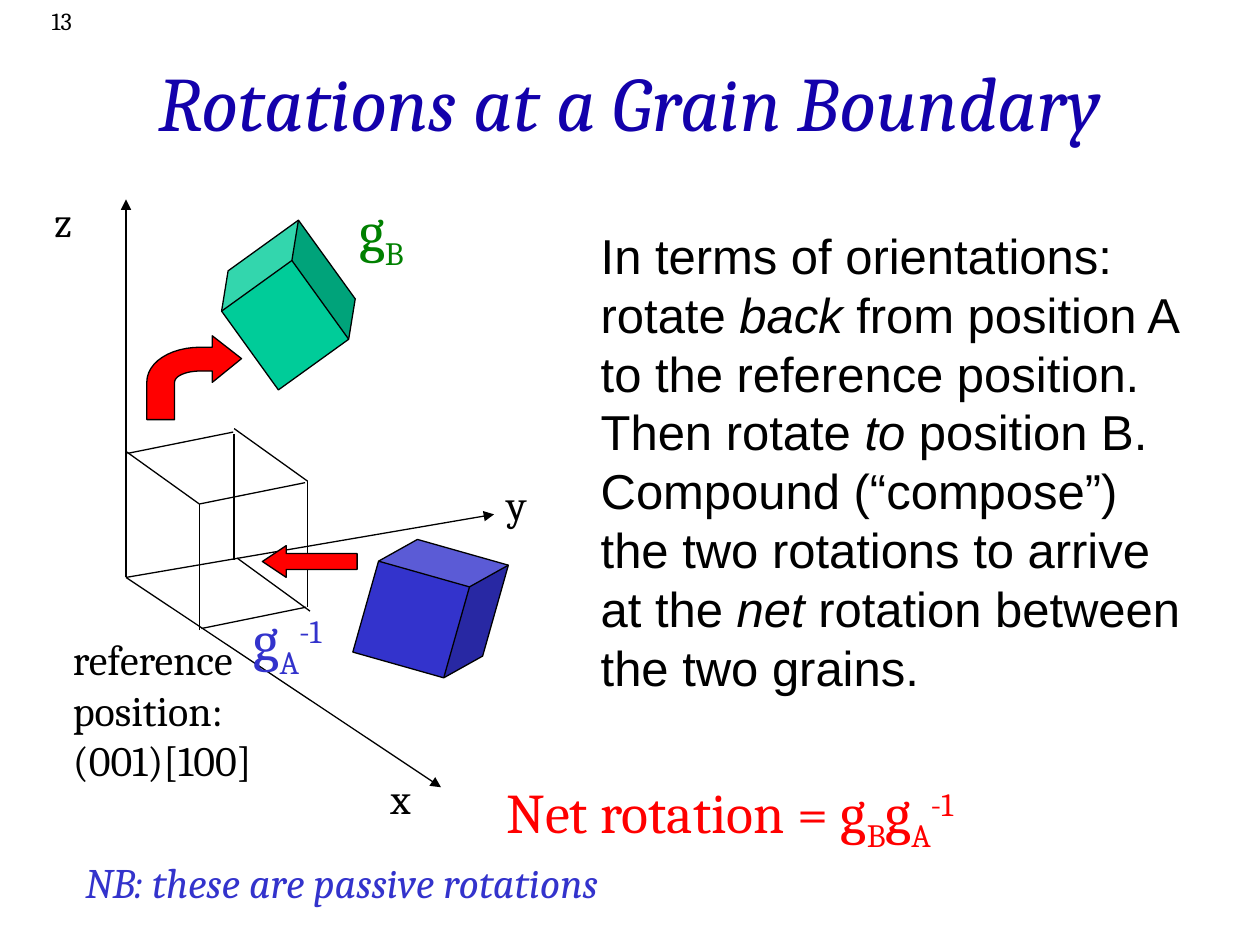
import pptx
import pptx.util
import pptx.dml.color
import pptx.oxml
import pptx.oxml.ns
import pptx.enum.shapes
import pptx.enum.text

Cm, Pt = pptx.util.Cm, pptx.util.Pt
KIND = pptx.enum.shapes.MSO_SHAPE
ALIGN = pptx.enum.text.PP_ALIGN

HUES = {
    "ink": "000000", "title": "1301AB", "red": "FF0000",
    "teal": "00CC99", "blue": "3333CC", "green": "008000",
}
SUB, SUP = "-25000", "30000"


def hue(name):
    return pptx.dml.color.RGBColor.from_string(HUES[name])


def style(par, size, color="ink", face="Cambria", slant=False):
    font = par.font
    font.size, font.name, font.italic = Pt(size), face, slant
    font.color.rgb = hue(color)


def fill_par(par, parts):
    """Parts are strings or (text, mark) pairs; a mark is "i", SUB or SUP."""
    for part in parts:
        text, mark = (part, None) if isinstance(part, str) else part
        for i, line in enumerate(text.split("\n")):
            if i:
                par.add_line_break()
            run = par.add_run()
            run.text = line
            if mark == "i":
                run.font.italic = True
            elif mark:
                run.font._element.set("baseline", mark)


def label(slide, box, pars, size, color="ink", face="Cambria", slant=False):
    frame = slide.shapes.add_textbox(*map(Cm, box)).text_frame
    frame.word_wrap = False
    for i, parts in enumerate(pars):
        par = frame.add_paragraph() if i else frame.paragraphs[0]
        style(par, size, color, face, slant)
        fill_par(par, parts)
    return frame


def paint(shape, color):
    shape.shadow.inherit = False
    shape.fill.solid()
    shape.fill.fore_color.rgb = hue(color)
    shape.line.color.rgb = hue("ink")
    shape.line.width = Pt(0.75)


def solid(slide, kind, box, color, turn=0):
    shape = slide.shapes.add_shape(kind, *map(Cm, box))
    shape.rotation = turn
    paint(shape, color)
    return shape


def edge(slide, start, end, arrow=False):
    line = slide.shapes.add_connector(
        pptx.enum.shapes.MSO_CONNECTOR.STRAIGHT, *map(Cm, start + end))
    line.line.color.rgb = hue("ink")
    line.line.width = Pt(0.75)
    if arrow:
        tail = pptx.oxml.ns.qn("a:tailEnd")
        line.line._get_or_add_ln().makeelement(tail)
        line.line._get_or_add_ln().append(pptx.oxml.parse_xml(
            '<a:tailEnd xmlns:a="http://schemas.openxmlformats.org/'
            'drawingml/2006/main" type="triangle"/>'))
    props = line._element.spPr
    props.append(props.makeelement(pptx.oxml.ns.qn("a:effectLst")))


def curve(a, b, c, d, steps=12):
    """Points along a cubic curve, without its start."""
    for i in range(1, steps + 1):
        t = i / steps
        u = 1 - t
        yield tuple(u**3 * p + 3 * u * u * t * q + 3 * u * t * t * r + t**3 * s
                    for p, q, r, s in zip(a, b, c, d))


def bend(slide, x, y):
    """Curved arrow that leads from the reference cube to grain B."""
    dots = [(1.91, 0.46), (1.32, 0), (1.32, 0.23), (1.09, 0.23)]
    dots += curve((1.09, 0.23), (0.48, 0.23), (0, 0.53), (0, 0.94))
    dots += [(0, 1.69), (0.56, 1.69), (0.56, 0.94)]
    dots += curve((0.56, 0.94), (0.56, 0.81), (0.79, 0.71), (1.09, 0.71))
    dots += [(1.32, 0.71), (1.32, 0.94)]
    dots = [(Cm(x + p), Cm(y + q)) for p, q in dots]
    pen = slide.shapes.build_freeform(*dots[0])
    pen.add_line_segments(dots[1:], close=True)
    paint(pen.convert_to_shape(), "red")


def heading(slide, box):
    title = slide.shapes.title
    title.left, title.top, title.width, title.height = map(Cm, box)
    frame = title.text_frame
    frame.vertical_anchor = pptx.enum.text.MSO_ANCHOR.MIDDLE
    par = frame.paragraphs[0]
    par.alignment = ALIGN.CENTER
    style(par, 44, "title", slant=True)
    fill_par(par, ["Rotations at a Grain Boundary"])


def scene(slide, x, y):
    """Axes, cubes and arrows; x, y is the tip of the z axis."""
    def at(p, q, *size):
        return (x + p, y + q) + size

    # Axes and their names
    for tip in ((6.35, 11.85), (7.42, 6.35), (0, 0)):
        edge(slide, at(0, 7.62), at(*tip), arrow=True)
    for name, p, q in (("x", 5.08, 11.42), ("z", -1.7, -0.21), ("y", 7.42, 5.5)):
        label(slide, at(p, q, 0.93, 1.27), [[name]], 24)

    # Grains
    solid(slide, KIND.CUBE, at(2.11, 0.86, 2.33, 2.54), "teal", 324.2)
    solid(slide, KIND.CUBE, at(4.87, 6.98, 2.54, 2.54), "blue", 15.8)
    label(slide, at(2.33, 8.04, 2.24, 1.6),
          [["g", ("A", SUB), ("-1", SUP)]], 32, "blue")
    label(slide, at(4.45, -0.21, 1.57, 1.6), [["g", ("B", SUB)]], 32, "green")

    # Reference cube
    near, right = (1.48, 6.14), (3.66, 5.68)
    for start, end in (
        ((1.48, 8.68), near), ((2.18, 7.26), (2.18, 4.72)),
        ((1.52, 8.65), (3.63, 8.22)), ((0.03, 5.12), (2.16, 4.69)),
        (near, (3.61, 5.71)), ((2.24, 7.23), (3.71, 8.3)),
        ((2.18, 4.62), right), ((0, 5.08), near), ((3.66, 8.22), right),
    ):
        edge(slide, at(*start), at(*end))

    # Rotation arrows
    bend(slide, *at(0.42, 2.75))
    arrow = solid(slide, KIND.LEFT_ARROW, at(2.75, 6.98, 1.91, 0.64), "red")
    arrow.adjustments[1] = 0.75
    label(slide, at(-1.32, 8.63, 4.19, 3.3),
          [["reference\nposition:\n(001)[100]"]], 24)


def notes(slide, x, y):
    """Explanation; x, y is its top left corner."""
    label(slide, (x, y, 12.27, 9.75), [
        ["In terms of orientations:"],
        ["rotate ", ("back", "i"),
         " from position A\nto the reference position.\nThen rotate ",
         ("to", "i"),
         " position B.\nCompound (“compose”)\nthe two rotations to arrive\nat the ",
         ("net", "i"), " rotation between\nthe two grains."],
    ], 28, face="Arial")


def footer(slide, x, y):
    """Result and remark; x, y is the left of the remark, top of the result."""
    label(slide, (x + 8.49, y, 9.91, 1.6),
          [["Net rotation = g", ("B", SUB), "g", ("A", SUB), ("-1", SUP)]],
          32, "red")
    label(slide, (x, y + 1.61, 11.15, 1.27),
          [["NB: these are passive rotations"]], 24, "blue", slant=True)


def main():
    deck = pptx.Presentation()
    deck.slide_width, deck.slide_height = Cm(25.4), Cm(19.05)
    slide = deck.slides.add_slide(deck.slide_layouts[5])
    number = label(slide, (0, 0, 1.7, 0.84), [["13"]], 14)
    number.paragraphs[0].alignment = ALIGN.RIGHT
    heading(slide, (1.91, 0.43, 21.59, 3.18))
    scene(slide, 2.54, 4.02)
    notes(slide, 11.86, 4.42)
    footer(slide, 1.47, 15.54)
    deck.save("out.pptx")


if __name__ == "__main__":
    main()
